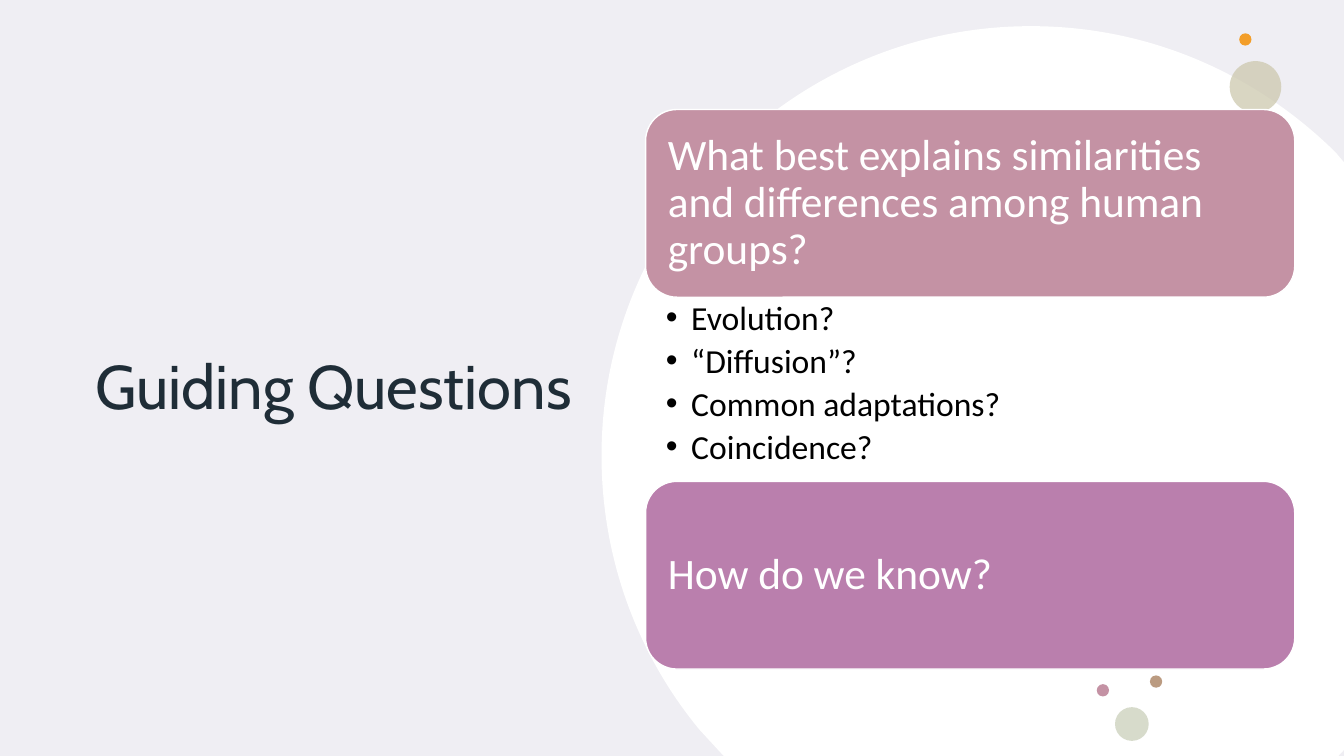
from lxml.etree import SubElement
from pptx import Presentation
from pptx.dml.color import RGBColor as Rgb
from pptx.enum.shapes import MSO_SHAPE as Form
from pptx.enum.text import MSO_ANCHOR as Anchor
from pptx.enum.text import MSO_AUTO_SIZE as Fit
from pptx.enum.text import PP_ALIGN as Align
from pptx.oxml.ns import qn
from pptx.util import Cm, Pt

WIDE, HIGH = 33.87, 19.05
HUES = {
    "page": "EFEEF3", "white": "FFFFFF", "black": "000000", "ink": "1F2D37",
    "sand": "CBC7AB", "gold": "F39E29", "tan": "BB9B81", "sage": "D7DBCB",
    "rose": "C492A4", "plum": "BA7FAD",
}
# Disc outline: a pair is a corner, three pairs are a curve
START = (25.98, 0.66)
RIM = [
    [(28.99, 0.66), (31.67, 1.88), (33.66, 3.84)],
    [(WIDE, 4.09)],
    [(WIDE, 18.9)],
    [(33.73, HIGH)],
    [(18.24, HIGH)],
    [(17.63, 18.39)],
    [(16.08, 16.51), (15.16, 14.1), (15.16, 11.48)],
    [(15.16, 5.51), (20.02, 0.66), START],
]
# Left, top, size, colour, opacity in percent
DOTS = [
    (30.99, 1.54, 1.3, "sand", 72),
    (31.23, 0.84, 0.31, "gold", 100),
    (28.98, 17.02, 0.31, "tan", 100),
    (28.1, 17.82, 0.85, "sage", 100),
    (27.64, 17.24, 0.31, "rose", 100),
]
LEFT, SPAN, TALL = 16.27, 16.36, 4.73
CARDS = [
    (2.76, "rose", "What best explains similarities and differences "
                   "among human groups?"),
    (12.13, "plum", "How do we know?"),
]
IDEAS = ["Evolution?", "“Diffusion”?", "Common adaptations?", "Coincidence?"]


def hue(name):
    return Rgb.from_string(HUES[name])


def style(item, form):
    for key, value in form.items():
        setattr(item, key, value)


def paint(shape, name, clear=100):
    shape.shadow.inherit = False
    shape.line.fill.background()
    shape.fill.solid()
    shape.fill.fore_color.rgb = hue(name)
    if clear < 100:
        tone = shape._element.spPr.find(".//" + qn("a:srgbClr"))
        SubElement(tone, qn("a:alpha"), val=str(clear * 1000))


def frame(shape, pads, anchor):
    """Set the insets (left, top, right, bottom) and the anchor."""
    sides = ("margin_left", "margin_top", "margin_right", "margin_bottom")
    form = {side: Cm(pad) for side, pad in zip(sides, pads)}
    form.update(word_wrap=True, auto_size=Fit.NONE, vertical_anchor=anchor)
    style(shape.text_frame, form)


def write(para, text, font, size, name):
    style(para, {"text": text, "alignment": Align.LEFT, "line_spacing": 0.9})
    style(para.runs[0].font, {"name": font, "size": Pt(size)})
    para.runs[0].font.color.rgb = hue(name)


def bullet(para):
    props = para._p.get_or_add_pPr()
    props.set("marL", str(Cm(0.64)))
    props.set("indent", str(Cm(-0.64)))
    SubElement(props, qn("a:buFont"), typeface="Arial")
    SubElement(props, qn("a:buChar"), char="•")


def add_title(slide, text):
    title = slide.shapes.title
    style(title, {"left": Cm(2.15), "top": Cm(2.64),
                  "width": Cm(12.8), "height": Cm(14.33)})
    frame(title, (0.25, 0.13, 0.25, 0.13), Anchor.MIDDLE)
    write(title.text_frame.paragraphs[0], text, "Cabin", 44, "ink")


def add_disc(slide, start, rim):
    """Draw the outline by its corners, then bend the curved parts."""
    ends = [(Cm(x), Cm(y)) for x, y in (part[-1] for part in rim)]
    pen = slide.shapes.build_freeform(Cm(start[0]), Cm(start[1]))
    pen.add_line_segments(ends, close=True)
    disc = pen.convert_to_shape()
    paint(disc, "white")
    lines = disc._element.spPr.findall(".//" + qn("a:lnTo"))
    for line, part in zip(lines, rim):
        if len(part) == 3:
            line.tag = qn("a:cubicBezTo")
            line.remove(line[0])
            for x, y in part:
                SubElement(line, qn("a:pt"), x=str(Cm(x) - disc.left),
                           y=str(Cm(y) - disc.top))


def add_dot(slide, left, top, size, name, clear):
    dot = slide.shapes.add_shape(
        Form.OVAL, Cm(left), Cm(top), Cm(size), Cm(size))
    paint(dot, name, clear)


def add_card(slide, top, name, text):
    card = slide.shapes.add_shape(
        Form.ROUNDED_RECTANGLE, Cm(LEFT), Cm(top), Cm(SPAN), Cm(TALL))
    paint(card, name)
    card.line.color.rgb = hue("white")
    card.line.width = Pt(1)
    frame(card, (0.33,) * 4, Anchor.MIDDLE)
    write(card.text_frame.paragraphs[0], text, "Calibri", 31, "white")


def add_list(slide, top, height, items):
    box = slide.shapes.add_textbox(
        Cm(LEFT), Cm(top), Cm(SPAN), Cm(height))
    frame(box, (0.51, 0.1, 0.61, 0.1), Anchor.TOP)
    body = box.text_frame
    for spot, item in enumerate(items):
        para = body.add_paragraph() if spot else body.paragraphs[0]
        write(para, item, "Calibri", 24, "black")
        style(para, {"level": 1, "space_after": Pt(4.8)})
        bullet(para)


def main():
    deck = Presentation()
    style(deck, {"slide_width": Cm(WIDE), "slide_height": Cm(HIGH)})
    slide = deck.slides.add_slide(deck.slide_layouts[5])

    # Backdrop and title
    slide.background.fill.solid()
    slide.background.fill.fore_color.rgb = hue("page")
    add_title(slide, "Guiding Questions")

    # Disc and dots
    add_disc(slide, START, RIM)
    for dot in DOTS:
        add_dot(slide, *dot)

    # Questions and possible answers
    for card in CARDS:
        add_card(slide, *card)
    add_list(slide, CARDS[0][0] + TALL, 4.62, IDEAS)

    deck.save("out.pptx")


if __name__ == "__main__":
    main()
